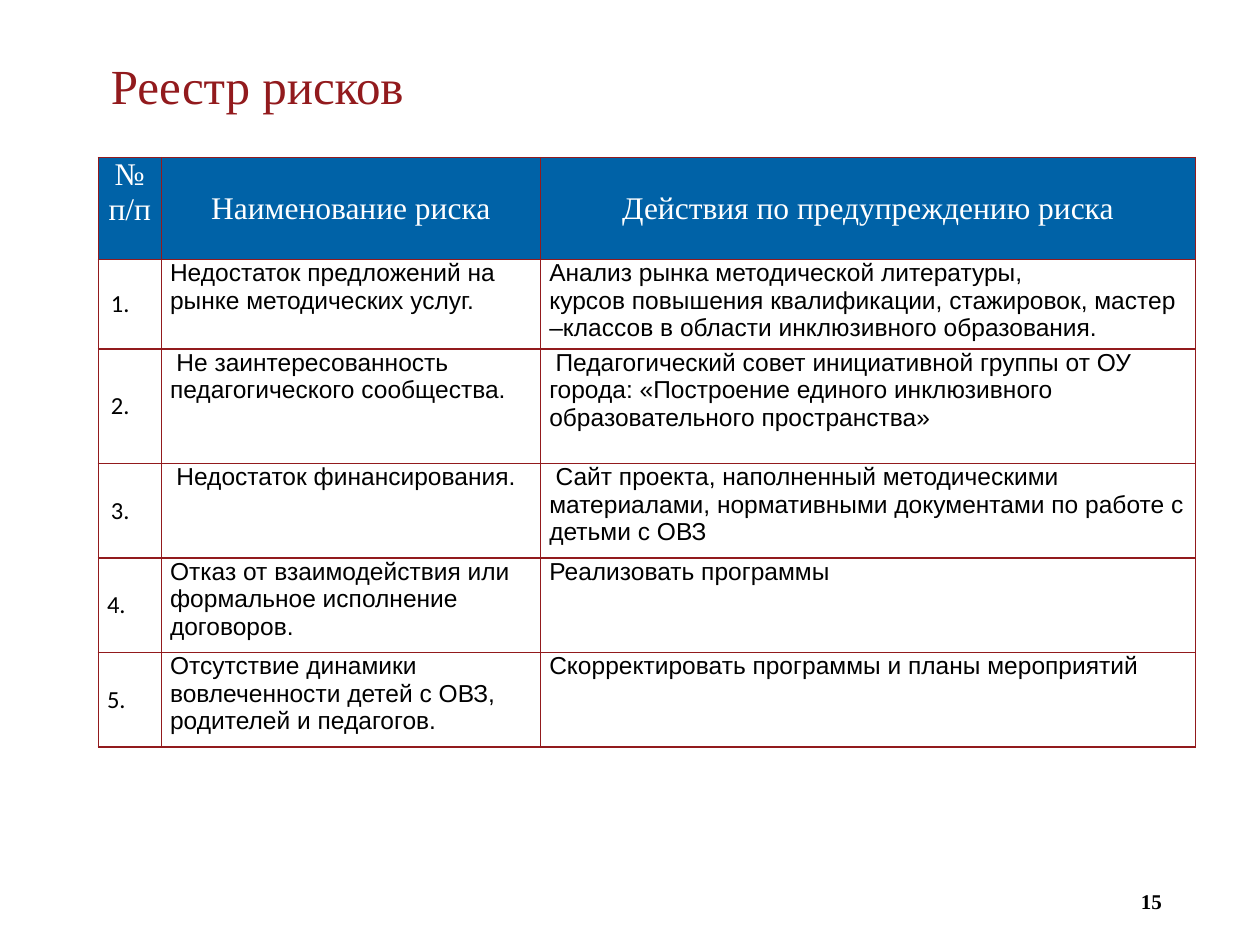
import pptx
import pptx.dml.color
import pptx.enum.text
import pptx.oxml
import pptx.oxml.ns
import pptx.util
from dataclasses import dataclass

Inches = pptx.util.Inches
Pt = pptx.util.Pt
ALIGN = pptx.enum.text.PP_ALIGN
ANCHOR = pptx.enum.text.MSO_ANCHOR


@dataclass(frozen=True)
class Theme:
    accent: str = "921A1D"
    header: str = "0062A7"
    paper: str = "FFFFFF"
    ink: str = "000000"
    serif: str = "Times New Roman"
    sans: str = "Arial"
    numeral: str = "Calibri"
    title_size: int = 28
    header_size: int = 18
    body_size: int = 14
    page_size: int = 12
    border: float = 1


THEME = Theme()
COLUMN_WIDTHS = (0.5, 3.01, 5.2)
ROW_HEIGHTS = (0.81, 0.71, 0.91, 0.75, 0.75, 0.75)
HEADINGS = ("№\nп/п", "Наименование риска", "Действия по предупреждению риска")
RISKS = (
    ("Недостаток предложений на рынке методических услуг.",
     "Анализ рынка методической литературы,\n"
     "курсов повышения квалификации, стажировок, мастер –классов в области "
     "инклюзивного образования."),
    ("Не заинтересованность педагогического сообщества.",
     "Педагогический совет инициативной группы от ОУ города: «Построение единого "
     "инклюзивного образовательного пространства»"),
    ("Недостаток финансирования.",
     "Сайт проекта, наполненный методическими материалами, нормативными "
     "документами по работе с детьми с ОВЗ"),
    ("Отказ от взаимодействия или формальное исполнение договоров.",
     "Реализовать программы"),
    ("Отсутствие динамики вовлеченности детей с ОВЗ, родителей и педагогов.",
     "Скорректировать программы и планы мероприятий"),
)
INDENTED_RISKS = (2, 3)
WIDE_MARGIN_RISKS = (1, 2, 3)


def write(frame, text, font=THEME.sans, size=THEME.body_size, color=THEME.ink,
          bold=False, align=ALIGN.LEFT, spacing=None, indent=0):
    frame.word_wrap = True
    for number, line in enumerate(text.split("\n")):
        paragraph = frame.add_paragraph() if number else frame.paragraphs[0]
        paragraph.alignment = align
        if spacing:
            paragraph.line_spacing = spacing
        if indent:
            paragraph._p.get_or_add_pPr().set("indent", str(Inches(indent)))
        run = paragraph.add_run()
        run.text = line
        run.font.name = font
        run.font.size = Pt(size)
        run.font.bold = bold
        run.font.color.rgb = pptx.dml.color.RGBColor.from_string(color)


def draw_borders(cell):
    properties = cell._tc.get_or_add_tcPr()
    for position, side in enumerate(("lnL", "lnR", "lnT", "lnB")):
        properties.insert(position, pptx.oxml.parse_xml(
            f'<a:{side} {pptx.oxml.ns.nsdecls("a")} w="{Pt(THEME.border)}">'
            f'<a:solidFill><a:srgbClr val="{THEME.accent}"/></a:solidFill></a:{side}>'))


def fill_cell(cell, text, fill=THEME.paper, anchor=ANCHOR.TOP, margins=(0.07, 0),
              **text_format):
    side, edge = margins
    cell.margin_left = cell.margin_right = Inches(side)
    cell.margin_top = cell.margin_bottom = Inches(edge)
    cell.vertical_anchor = anchor
    cell.fill.solid()
    cell.fill.fore_color.rgb = pptx.dml.color.RGBColor.from_string(fill)
    draw_borders(cell)
    write(cell.text_frame, text, **text_format)


def add_title(slide, text):
    title = slide.shapes.title
    title.left, title.top = Inches(0.78), Inches(0.25)
    title.width, title.height = Inches(8.39), Inches(0.9)
    title.text_frame.vertical_anchor = ANCHOR.MIDDLE
    write(title.text_frame, text, font=THEME.serif, size=THEME.title_size,
          color=THEME.accent, spacing=0.9)


def add_risk_table(slide):
    table = slide.shapes.add_table(
        len(ROW_HEIGHTS), len(COLUMN_WIDTHS), Inches(0.78), Inches(1.25),
        Inches(sum(COLUMN_WIDTHS)), Inches(sum(ROW_HEIGHTS))).table
    table.first_row = table.horz_banding = False
    for column, width in zip(table.columns, COLUMN_WIDTHS):
        column.width = Inches(width)
    for row, height in zip(table.rows, ROW_HEIGHTS):
        row.height = Inches(height)

    for column, heading in enumerate(HEADINGS):
        fill_cell(table.cell(0, column), heading, fill=THEME.header,
                  anchor=ANCHOR.MIDDLE if column else ANCHOR.TOP,
                  font=THEME.serif, size=THEME.header_size, color=THEME.paper,
                  align=ALIGN.CENTER)
    for number, entries in enumerate(RISKS, start=1):
        margins = (0.1, 0.05) if number in WIDE_MARGIN_RISKS else (0.07, 0)
        fill_cell(table.cell(number, 0), f"{number}.", anchor=ANCHOR.MIDDLE,
                  margins=margins, font=THEME.numeral)
        indent = 0.05 if number in INDENTED_RISKS else 0
        for column, entry in enumerate(entries, start=1):
            fill_cell(table.cell(number, column), entry, indent=indent)


def add_page_number(slide, text):
    page = slide.shapes.add_textbox(Inches(7.07), Inches(6.95), Inches(2.25), Inches(0.4))
    page.text_frame.vertical_anchor = ANCHOR.MIDDLE
    write(page.text_frame, text, font=THEME.serif, size=THEME.page_size,
          bold=True, align=ALIGN.RIGHT)


def main():
    deck = pptx.Presentation()
    deck.slide_width, deck.slide_height = Inches(10), Inches(7.5)
    slide = deck.slides.add_slide(deck.slide_layouts.get_by_name("Title Only"))
    add_title(slide, "Реестр рисков")
    add_risk_table(slide)
    add_page_number(slide, "15")
    deck.save("out.pptx")


if __name__ == "__main__":
    main()
